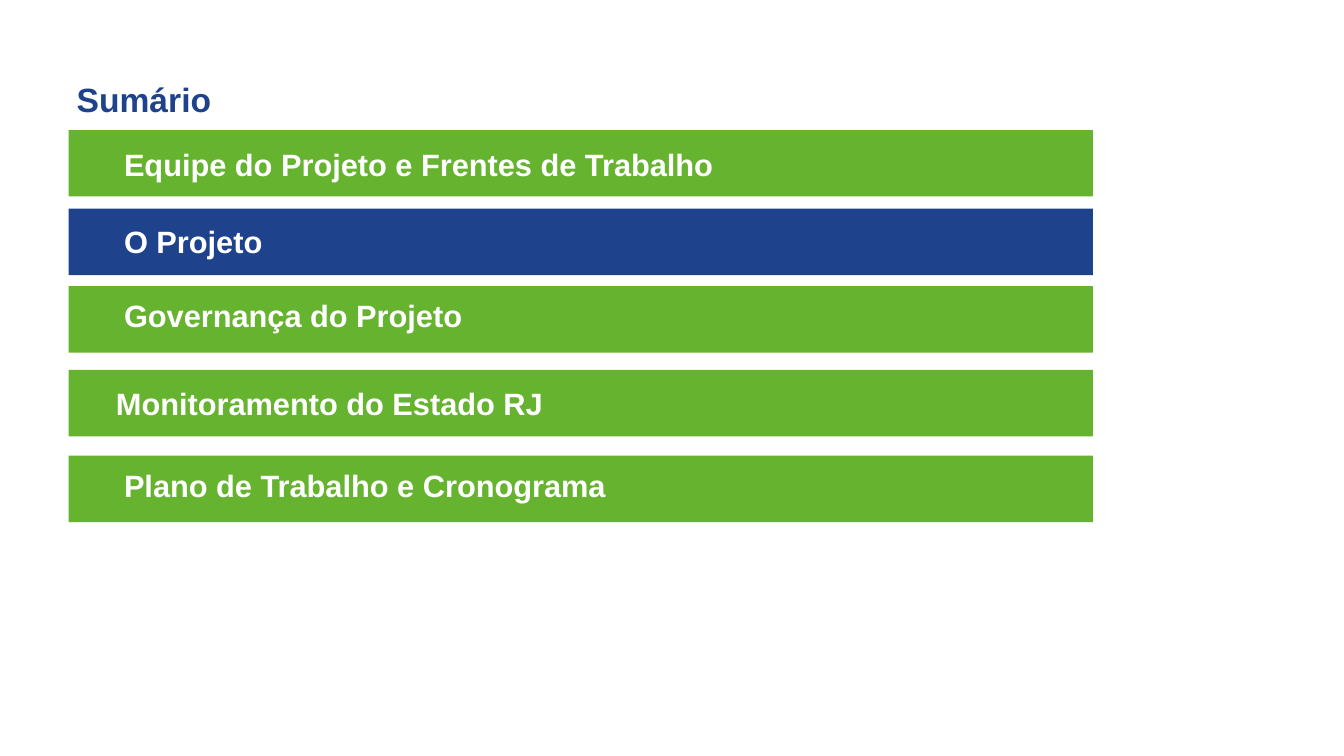
from dataclasses import dataclass

from pptx import Presentation
from pptx.dml.color import RGBColor
from pptx.enum.shapes import MSO_SHAPE
from pptx.enum.text import MSO_ANCHOR, MSO_AUTO_SIZE, PP_ALIGN
from pptx.shapes.autoshape import Shape
from pptx.slide import Slide
from pptx.util import Inches, Length, Pt

SLIDE_WIDTH = Inches(13.33)
SLIDE_HEIGHT = Inches(7.5)


def across(percent: float) -> Length:
    return Length(round(SLIDE_WIDTH * percent / 100))


def down(percent: float) -> Length:
    return Length(round(SLIDE_HEIGHT * percent / 100))


@dataclass(frozen=True)
class Theme:
    font: str = "Arial"
    green: RGBColor = RGBColor(0x65, 0xB3, 0x2E)
    blue: RGBColor = RGBColor(0x1E, 0x42, 0x8B)
    white: RGBColor = RGBColor(0xFF, 0xFF, 0xFF)
    title_size: Length = Pt(24)
    topic_size: Length = Pt(22)
    inset: Length = Inches(0.05)
    title_indent: Length = Inches(0.55)
    topic_indent: Length = Inches(0.55)


@dataclass(frozen=True)
class Topic:
    text: str
    top: float
    label_drop: float
    label_shift: float = 0
    current: bool = False


THEME = Theme()
BAND_LEFT = 5.1
BAND_WIDTH = 76.22
BAND_HEIGHT = 8.8
LABEL_HEIGHT = 6.27
TITLE_LEFT = 1.58
TITLE_TOP = 9.73
TITLE_HEIGHT = 6.67

TOPICS = [
    Topic("Equipe do Projeto e Frentes de Trabalho", 17.2, 1.33),
    Topic("O Projeto", 27.6, 1.2, current=True),
    Topic("Governança do Projeto", 37.87, 0.67),
    Topic("Monitoramento do Estado RJ", 48.93, 1.33, label_shift=-0.6),
    Topic("Plano de Trabalho e Cronograma", 60.27, 0.8),
]


def write_line(box: Shape, text: str, size: Length, color: RGBColor, indent: Length) -> None:
    frame = box.text_frame
    frame.word_wrap = True
    frame.auto_size = MSO_AUTO_SIZE.NONE
    frame.vertical_anchor = MSO_ANCHOR.MIDDLE
    frame.margin_left = indent
    frame.margin_right = frame.margin_top = frame.margin_bottom = THEME.inset
    para = frame.paragraphs[0]
    para.alignment = PP_ALIGN.LEFT
    span = para.add_run()
    span.text = text
    span.font.name = THEME.font
    span.font.size = size
    span.font.bold = True
    span.font.color.rgb = color


def place_title(page: Slide, text: str) -> None:
    title = page.shapes.title
    title.left, title.top = across(TITLE_LEFT), down(TITLE_TOP)
    title.width, title.height = across(BAND_WIDTH), down(TITLE_HEIGHT)
    write_line(title, text, THEME.title_size, THEME.blue, THEME.title_indent)


def draw_topic(page: Slide, topic: Topic) -> None:
    band = page.shapes.add_shape(
        MSO_SHAPE.RECTANGLE, across(BAND_LEFT), down(topic.top),
        across(BAND_WIDTH), down(BAND_HEIGHT),
    )
    band.shadow.inherit = False
    band.fill.solid()
    band.fill.fore_color.rgb = THEME.blue if topic.current else THEME.green
    band.line.fill.background()
    label = page.shapes.add_textbox(
        across(BAND_LEFT + topic.label_shift), down(topic.top + topic.label_drop),
        across(BAND_WIDTH), down(LABEL_HEIGHT),
    )
    write_line(label, topic.text, THEME.topic_size, THEME.white, THEME.topic_indent)


def main() -> None:
    deck = Presentation()
    deck.slide_width, deck.slide_height = SLIDE_WIDTH, SLIDE_HEIGHT
    page = deck.slides.add_slide(deck.slide_layouts.get_by_name("Title Only"))
    place_title(page, "Sumário")
    for topic in TOPICS:
        draw_topic(page, topic)
    deck.save("out.pptx")


if __name__ == "__main__":
    main()
